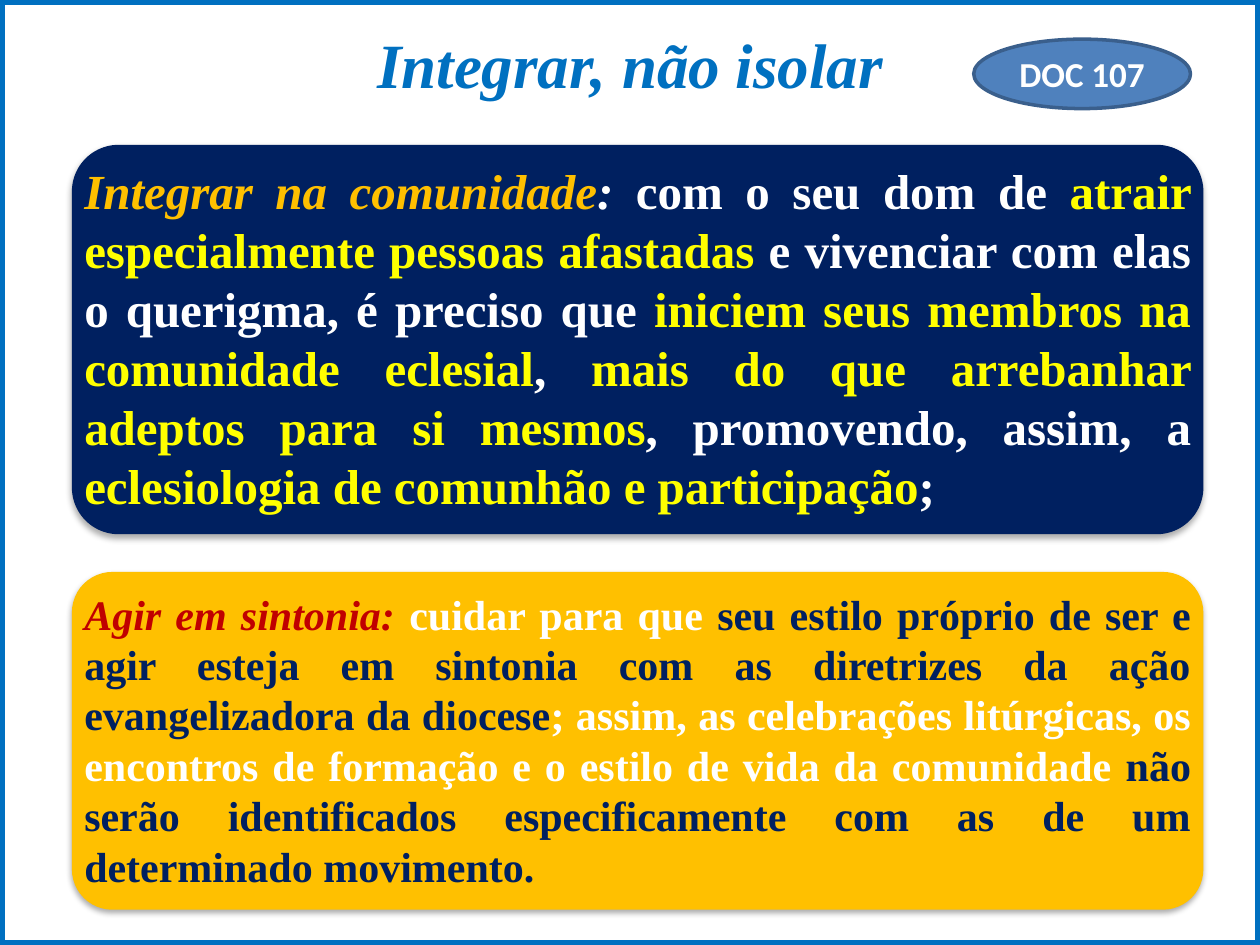
from lxml.etree import SubElement
from pptx import Presentation
from pptx.dml.color import RGBColor
from pptx.enum.shapes import MSO_SHAPE
from pptx.enum.text import MSO_ANCHOR, PP_ALIGN
from pptx.oxml.ns import qn
from pptx.util import Cm, Pt

BLUE = RGBColor(0x00, 0x70, 0xC0)
NAVY = RGBColor(0x00, 0x20, 0x60)
GOLD = RGBColor(0xFF, 0xC0, 0x00)
YELLOW = RGBColor(0xFF, 0xFF, 0x00)
RED = RGBColor(0xC0, 0x00, 0x00)
WHITE = RGBColor(0xFF, 0xFF, 0xFF)
BADGE_FILL = RGBColor(0x4F, 0x81, 0xBD)
BADGE_LINE = RGBColor(0x3A, 0x5F, 0x8C)
SERIF, SANS = "Times New Roman", "Calibri"

# Content: each run is (text, colour, italic)
HEADING = "Integrar, não isolar"
BADGE = "DOC 107"
PANELS = [
    {"top": 2.92, "height": 7.85, "fill": NAVY, "size": 28, "runs": [
        ("Integrar na comunidade", GOLD, True),
        (":", WHITE, True),
        (" com o seu dom de ", WHITE, False),
        ("atrair especialmente pessoas afastadas", YELLOW, False),
        (" e vivenciar com elas o querigma, é preciso que ", WHITE, False),
        ("iniciem seus membros na comunidade eclesial", YELLOW, False),
        (", ", WHITE, False),
        ("mais do que arrebanhar adeptos para si mesmos", YELLOW, False),
        (", promovendo, assim, a ", WHITE, False),
        ("eclesiologia de comunhão e participação", YELLOW, False),
        (";", WHITE, False),
    ]},
    {"top": 11.53, "height": 6.81, "fill": GOLD, "size": 24, "runs": [
        ("Agir em sintonia: ", RED, True),
        ("cuidar para que ", WHITE, False),
        ("seu estilo próprio de ser e agir esteja em sintonia com as "
         "diretrizes da ação evangelizadora da diocese", NAVY, False),
        ("; assim, as celebrações litúrgicas, os encontros de formação "
         "e o estilo de vida da comunidade ", WHITE, False),
        ("não serão identificados especificamente com as de um "
         "determinado movimento.", NAVY, False),
    ]},
]

# Layout in centimetres
SLIDE_W, SLIDE_H = 25.4, 19.05
PANEL_LEFT, PANEL_W = 1.45, 22.81
TEXT_GAP = 0.2
CORNER = 0.12


def write_runs(frame, runs, size, align, font=SERIF):
    frame.word_wrap = True
    paragraph = frame.paragraphs[0]
    paragraph.alignment = align
    for text, colour, italic in runs:
        run = paragraph.add_run()
        run.text = text
        run.font.name = font
        run.font.size = Pt(size)
        run.font.bold = True
        run.font.italic = italic
        run.font.color.rgb = colour


def add_box(slide, preset, left, top, width, height, fill=None, line=None, weight=0):
    box = slide.shapes.add_shape(preset, Cm(left), Cm(top), Cm(width), Cm(height))
    box.shadow.inherit = False
    if fill is None:
        box.fill.background()
    else:
        box.fill.solid()
        box.fill.fore_color.rgb = fill
    if line is None:
        box.line.fill.background()
    else:
        box.line.color.rgb = line
        box.line.width = Pt(weight)
    return box


def drop_shadow(box):
    effects = box.element.spPr.find(qn("a:effectLst"))
    shadow = SubElement(effects, qn("a:outerShdw"), blurRad=str(Pt(3.5)),
                        dist=str(Pt(2.2)), dir="5400000", rotWithShape="0")
    black = SubElement(shadow, qn("a:srgbClr"), val="000000")
    SubElement(black, qn("a:alpha"), val="32000")


def add_panel(slide, panel):
    top, height = panel["top"], panel["height"]
    card = add_box(slide, MSO_SHAPE.ROUNDED_RECTANGLE, PANEL_LEFT, top,
                   PANEL_W, height, panel["fill"])
    card.adjustments[0] = CORNER
    drop_shadow(card)
    message = slide.shapes.add_textbox(Cm(PANEL_LEFT), Cm(top + TEXT_GAP),
                                       Cm(PANEL_W), Cm(height - 2 * TEXT_GAP))
    write_runs(message.text_frame, panel["runs"], panel["size"], PP_ALIGN.JUSTIFY)


def main():
    deck = Presentation()
    deck.slide_width, deck.slide_height = Cm(SLIDE_W), Cm(SLIDE_H)
    slide = deck.slides.add_slide(deck.slide_layouts[5])

    # Border and heading
    add_box(slide, MSO_SHAPE.RECTANGLE, 0, 0, SLIDE_W, SLIDE_H, line=BLUE, weight=6)
    heading = slide.shapes.title
    heading.left, heading.top = Cm(4.2), Cm(0.38)
    heading.width, heading.height = Cm(17), Cm(1.8)
    heading.text_frame.vertical_anchor = MSO_ANCHOR.TOP
    write_runs(heading.text_frame, [(HEADING, BLUE, True)], 36, PP_ALIGN.CENTER)

    # Text panels
    for panel in PANELS:
        add_panel(slide, panel)

    # Document badge
    badge = add_box(slide, MSO_SHAPE.OVAL, 19.63, 0.79, 4.37, 1.4,
                    BADGE_FILL, BADGE_LINE, 2)
    badge.text_frame.vertical_anchor = MSO_ANCHOR.MIDDLE
    write_runs(badge.text_frame, [(BADGE, WHITE, False)], 20, PP_ALIGN.CENTER, SANS)

    deck.save("out.pptx")


if __name__ == "__main__":
    main()
